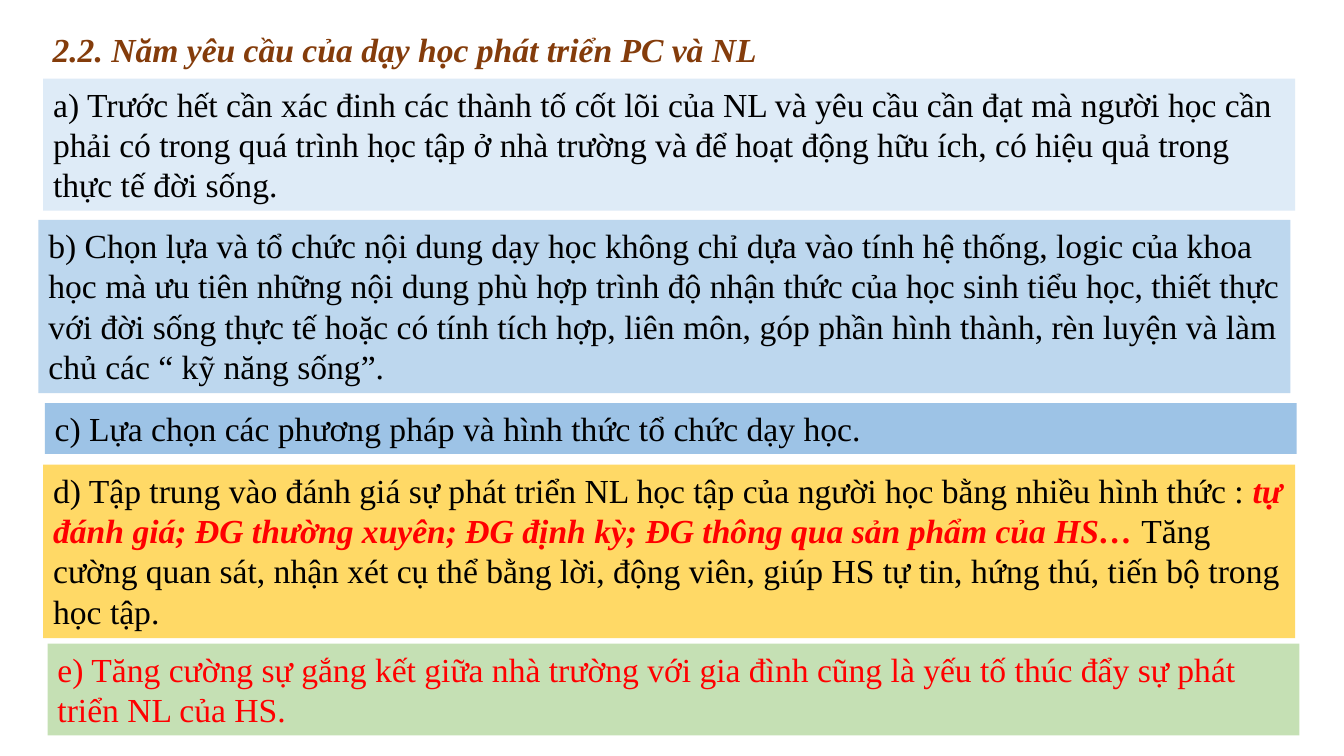
from pptx import Presentation
from pptx.dml.color import RGBColor
from pptx.enum.shapes import MSO_SHAPE
from pptx.enum.text import MSO_ANCHOR, MSO_AUTO_SIZE, PP_ALIGN
from pptx.util import Cm, Pt

BLACK = RGBColor(0x00, 0x00, 0x00)
RED = RGBColor(0xFF, 0x00, 0x00)
BROWN = RGBColor(0x84, 0x3C, 0x0B)
PALE_BLUE = RGBColor(0xDE, 0xEB, 0xF7)
LIGHT_BLUE = RGBColor(0xBD, 0xD7, 0xEE)
MID_BLUE = RGBColor(0x9D, 0xC3, 0xE6)
YELLOW = RGBColor(0xFF, 0xD9, 0x66)
GREEN = RGBColor(0xC5, 0xE0, 0xB4)

FONT = "Times New Roman"
TEXT_SIZE = Pt(24)
BAND_WIDTH = 31.55

TITLE = "2.2. Năm yêu cầu của dạy học phát triển PC và NL"

# Left, top and height in cm, fill, text colour, and text pieces;
# every second piece is emphasised.
REQUIREMENTS = [
    (1.09, 1.98, 3.33, PALE_BLUE, BLACK, [
        "a) Trước hết cần xác đinh các thành tố cốt lõi của NL và yêu cầu cần đạt "
        "mà người học cần phải có trong quá trình học tập ở nhà trường và để hoạt "
        "động hữu ích, có hiệu quả trong thực tế đời sống."]),
    (0.97, 5.54, 4.37, LIGHT_BLUE, BLACK, [
        "b) Chọn lựa và tổ chức nội dung dạy học không chỉ dựa vào tính hệ thống, "
        "logic của khoa học mà ưu tiên những nội dung phù hợp trình độ nhận thức "
        "của học sinh tiểu học, thiết thực với đời sống thực tế hoặc có tính tích "
        "hợp, liên môn, góp phần hình thành, rèn luyện và làm chủ các “ kỹ năng sống”."]),
    (1.13, 10.16, 1.28, MID_BLUE, BLACK, [
        "c) Lựa chọn các phương pháp và hình thức tổ chức dạy học."]),
    (1.09, 11.71, 4.37, YELLOW, BLACK, [
        "d) Tập trung vào đánh giá sự phát triển NL học tập của người học bằng "
        "nhiều hình thức : ",
        "tự đánh giá; ĐG thường xuyên; ĐG định kỳ; ĐG thông qua sản phẩm của HS… ",
        "Tăng cường quan sát, nhận xét cụ thể bằng lời, động viên, giúp HS tự tin, "
        "hứng thú, tiến bộ trong học tập."]),
    (1.2, 16.22, 2.31, GREEN, RED, [
        "e) Tăng cường sự gắng kết giữa nhà trường với gia đình cũng là yếu tố "
        "thúc đẩy sự phát triển NL của HS."]),
]


def format_text(shape, color):
    """Set the shared text layout and return the only paragraph."""
    frame = shape.text_frame
    frame.word_wrap = True
    frame.auto_size = MSO_AUTO_SIZE.SHAPE_TO_FIT_TEXT
    frame.vertical_anchor = MSO_ANCHOR.TOP
    paragraph = frame.paragraphs[0]
    paragraph.alignment = PP_ALIGN.LEFT
    paragraph.font.name = FONT
    paragraph.font.size = TEXT_SIZE
    paragraph.font.color.rgb = color
    return paragraph


def place_title(slide, left, top, width, height):
    title = slide.shapes.title
    title.left, title.top = Cm(left), Cm(top)
    title.width, title.height = Cm(width), Cm(height)
    title.text_frame.text = TITLE
    paragraph = format_text(title, BROWN)
    paragraph.font.bold = True
    paragraph.font.italic = True


def add_requirement(slide, left, top, width, height, fill, color, pieces):
    band = slide.shapes.add_shape(
        MSO_SHAPE.RECTANGLE, Cm(left), Cm(top), Cm(width), Cm(height))
    band.shadow.inherit = False
    band.fill.solid()
    band.fill.fore_color.rgb = fill
    band.line.fill.background()
    paragraph = format_text(band, color)
    for index, piece in enumerate(pieces):
        run = paragraph.add_run()
        run.text = piece
        if index % 2:
            run.font.bold = True
            run.font.italic = True
            run.font.color.rgb = RED


def main():
    presentation = Presentation()
    presentation.slide_width = Cm(33.87)
    presentation.slide_height = Cm(19.05)
    title_only = presentation.slide_layouts.get_by_name("Title Only")
    slide = presentation.slides.add_slide(title_only)
    place_title(slide, 1.07, 0.61, BAND_WIDTH, 1.28)
    for left, top, height, fill, color, pieces in REQUIREMENTS:
        add_requirement(slide, left, top, BAND_WIDTH, height, fill, color, pieces)
    presentation.save("out.pptx")


if __name__ == "__main__":
    main()
